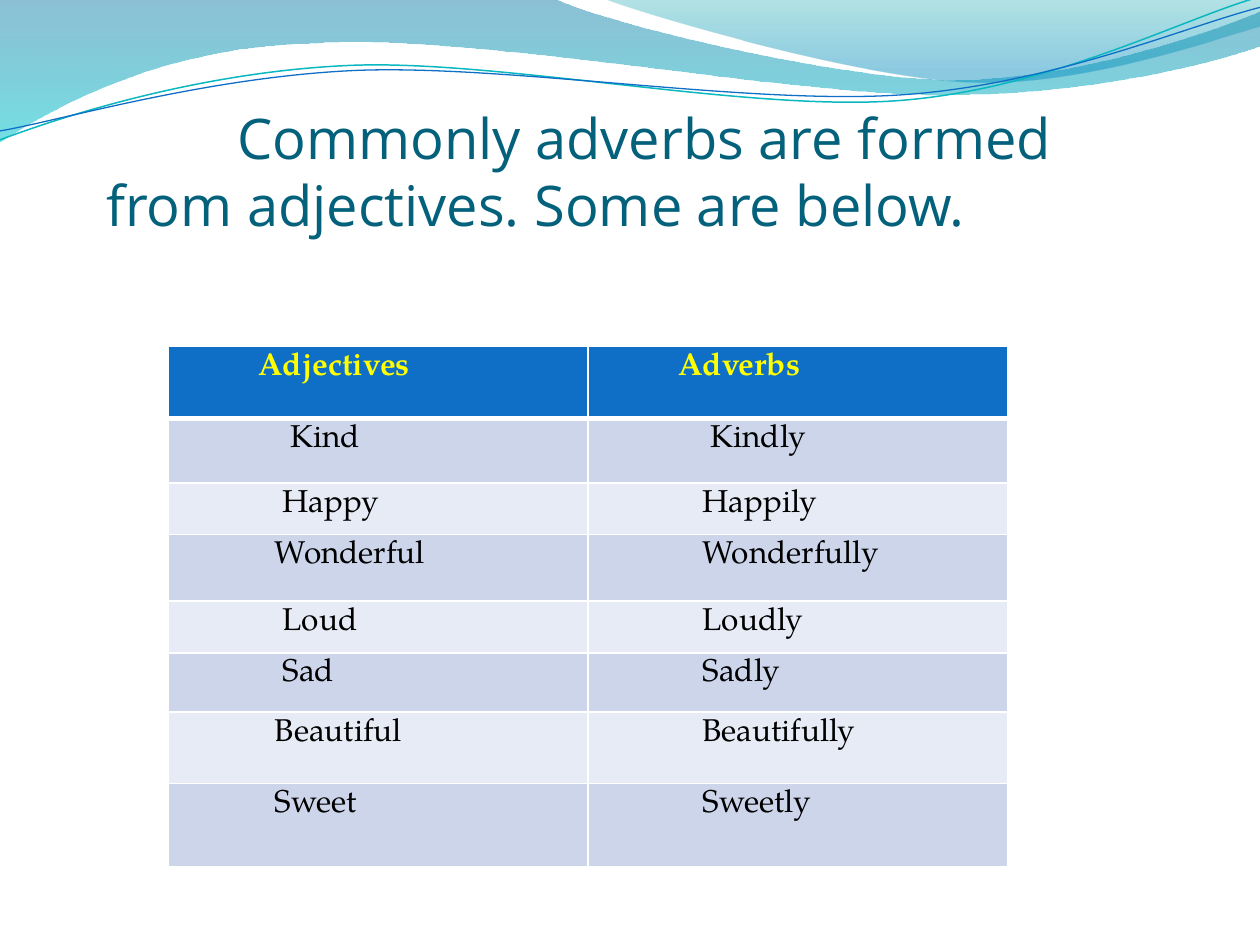
from lxml.etree import SubElement
from pptx import Presentation
from pptx.dml.color import RGBColor as RGB
from pptx.enum.text import MSO_ANCHOR as Anchor, MSO_AUTO_SIZE as Fit, PP_ALIGN as Align
from pptx.oxml import parse_xml
from pptx.oxml.ns import nsdecls, qn
from pptx.util import Cm, Pt

WHITE = RGB(0xFF, 0xFF, 0xFF)
BLACK = RGB(0x00, 0x00, 0x00)
YELLOW = RGB(0xFF, 0xFF, 0x00)
BLUE = RGB(0x0F, 0x6F, 0xC6)
TEAL = RGB(0x0A, 0xB8, 0xBF)
DEEP = RGB(0x04, 0x61, 0x7B)
BANDS = RGB(0xCC, 0xD5, 0xEA), RGB(0xE7, 0xEB, 0xF5)

# Outlines in cm: a pair is a straight step, six numbers are a curve.
# Fills hold (position, colour, opacity in percent).
WAVES = [
    ([(0, 0), (11.18, -0.03), (12.09, 0.43, 16.87, 1.6, 19.25, 1.6),
      (21.67, 1.6, 24.33, 0.66, 25.4, 0.23), (25.43, 0.91),
      (24.97, 1.12, 22.1, 1.93, 18.95, 1.91), (15.8, 1.91, 9.7, 0.71, 6.53, 0.86),
      (3.28, 0.91, 1.17, 2.11, -0.03, 2.87), (0, 0)],
     [(0, RGB(0x00, 0x74, 0xA1), 45), (1, RGB(0x00, 0xC6, 0xCF), 55)]),
    ([(12.17, -0.03), (12.93, 0.28, 17.32, 1.57, 19.53, 1.65),
      (21.74, 1.75, 24.41, 0.81, 25.4, 0.53), (25.4, 0), (12.17, -0.03)],
     [(0, RGB(0x00, 0xA1, 0xA9), 30), (0.8, RGB(0x00, 0x8B, 0xBF), 45)]),
]
LINES = [
    ([(0, 2.82), (1.22, 2.36, 4.01, 1.45, 7.04, 1.32),
      (10.03, 1.19, 15.06, 2.26, 18.11, 2.03), (21.16, 1.8, 23.83, 0.38, 25.35, -0.05)],
     TEAL, 0.85),
    ([(0, 2.64), (1.19, 2.44, 4.17, 1.55, 7.19, 1.42),
      (10.24, 1.3, 15.16, 2.13, 18.21, 1.91), (21.23, 1.7, 23.9, 0.53, 25.4, 0.15)],
     BLUE, 0.75),
]

# Row height in cm, then each word with its indent in steps
ROWS = [
    (1.45, ("Adjectives", 10), ("Adverbs", 10)),
    (1.3, ("Kind", 14), ("Kindly", 14)),
    (1.03, ("Happy", 13), ("Happily", 13)),
    (1.35, ("Wonderful", 12), ("Wonderfully", 13)),
    (1.04, ("Loud", 13), ("Loudly", 13)),
    (1.19, ("Sad", 13), ("Sadly", 13)),
    (1.44, ("Beautiful", 12), ("Beautifully", 13)),
    (1.68, ("Sweet", 12), ("Sweetly", 13)),
]
STEP = 0.16


def write(frame, text, font, size, color, bold=False):
    frame.text = text
    para = frame.paragraphs[0]
    para.alignment = Align.LEFT
    for run in para.runs:
        run.font.name = font
        run.font.size = Pt(size)
        run.font.color.rgb = color
        run.font.bold = bold
    return para


def bend(shape, steps):
    """Join each three segments that stand for a curve into one Bézier."""
    route = next(shape.element.iter(qn("a:path")))
    nodes = iter(route.findall(qn("a:lnTo")))
    for step in steps[1:]:
        first = next(nodes)
        if len(step) == 6:
            first.tag = qn("a:cubicBezTo")
            for _ in range(2):
                node = next(nodes)
                first.append(node[0])
                route.remove(node)


def draw(slide, steps, left, top, close):
    points = [(Cm(left + step[i]), Cm(top + step[i + 1]))
              for step in steps for i in range(0, len(step), 2)]
    pen = slide.shapes.build_freeform(*points[0])
    pen.add_line_segments(points[1:], close=close)
    shape = pen.convert_to_shape()
    shape.shadow.inherit = False
    bend(shape, steps)
    return shape


def add_waves(slide, left, top):
    for steps, stops in WAVES:
        shape = draw(slide, steps, left, top, True)
        shape.line.fill.background()
        shape.fill.gradient()
        shape.fill.gradient_angle = 270
        for stop, (place, color, _) in zip(shape.fill.gradient_stops, stops):
            stop.position = place
            stop.color.rgb = color
        tints = shape.element.spPr.iter(qn("a:srgbClr"))
        for tint, (_, _, alpha) in zip(tints, stops):
            SubElement(tint, qn("a:alpha"), val=str(alpha * 1000))
    for steps, color, width in LINES:
        shape = draw(slide, steps, left, top, False)
        shape.fill.background()
        shape.line.color.rgb = color
        shape.line.width = Pt(width)


def add_title(slide, left, top, width, height):
    title = slide.shapes.title
    title.left, title.top, title.width, title.height = map(Cm, (left, top, width, height))
    frame = title.text_frame
    frame.word_wrap = True
    frame.auto_size = Fit.NONE
    frame.vertical_anchor = Anchor.TOP
    frame.margin_left = frame.margin_right = frame.margin_bottom = 0
    frame.margin_top = Cm(0.13)
    para = write(frame, "Commonly adverbs are formed\vfrom adjectives. Some are below.",
                 "Open Sans", 32, DEEP)
    props = para._p.get_or_add_pPr()
    props.set("marL", str(Cm(0.87)))
    props.set("indent", str(Cm(2.64)))
    title.element.getparent().append(title.element)  # in front of the waves


def edge(cell, **widths):
    """Give the cell white borders; keys are sides in schema order."""
    props = cell._tc.get_or_add_tcPr()
    for i, (side, width) in enumerate(widths.items()):
        props.insert(i, parse_xml(
            f'<a:ln{side} {nsdecls("a")} w="{Pt(width)}"><a:solidFill>'
            f'<a:srgbClr val="{WHITE}"/></a:solidFill></a:ln{side}>'))


def add_words(slide, left, top, width):
    tall = sum(row[0] for row in ROWS)
    table = slide.shapes.add_table(len(ROWS), 2, *map(Cm, (left, top, width, tall))).table
    for col in table.columns:
        col.width = Cm(width / 2)
    for r, (height, *words) in enumerate(ROWS):
        table.rows[r].height = Cm(height)
        head = r == 0
        for c, (word, steps) in enumerate(words):
            cell = table.cell(r, c)
            cell.margin_left = Cm(0.23 + STEP * steps)
            cell.fill.solid()
            cell.fill.fore_color.rgb = BLUE if head else BANDS[(r - 1) % 2]
            write(cell.text_frame, word, "TeX Gyre Pagella", 18,
                  YELLOW if head else BLACK, bold=head)
            edge(cell, L=1, R=1, T=3 if r == 1 else 1, B=3 if head else 1)


def main():
    deck = Presentation()
    deck.slide_width, deck.slide_height = Cm(25.4), Cm(19.05)
    slide = deck.slides.add_slide(deck.slide_layouts[5])
    add_waves(slide, 0, 0)
    add_title(slide, 1.27, 1.96, 23.06, 10.74)
    add_words(slide, 3.39, 6.99, 16.93)
    deck.save("out.pptx")


if __name__ == "__main__":
    main()
